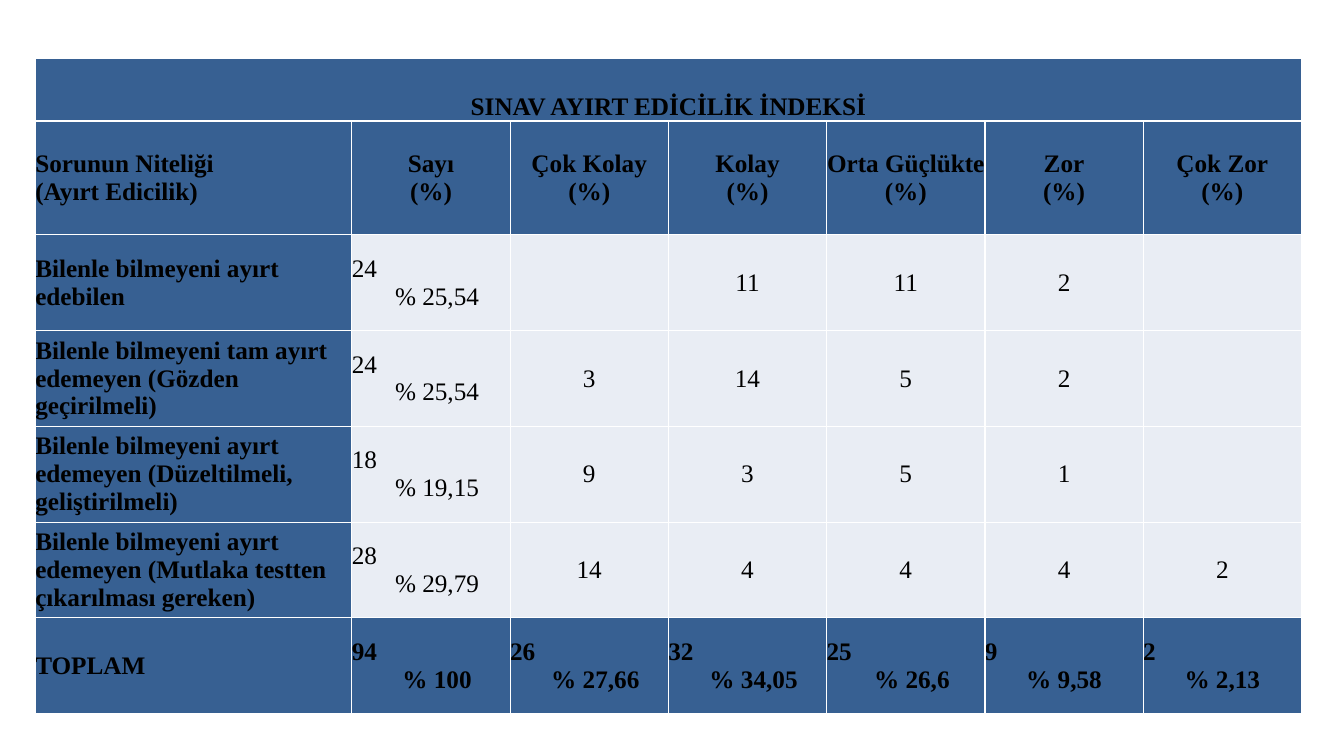
from lxml.etree import SubElement
from pptx import Presentation
from pptx.dml.color import RGBColor
from pptx.enum.text import MSO_ANCHOR as Anchor, PP_ALIGN as Align
from pptx.oxml.ns import qn
from pptx.util import Inches, Pt

FONT = "Times New Roman"
BLUE, PALE, WHITE, BLACK = "376092", "E9EDF4", "FFFFFF", "000000"

# Table grid: the label column is twice as wide as a value column
LEFT, TOP = 0.35, 0.58
VALUE_WIDTH = 1.57
COLUMN_WIDTHS = [2 * VALUE_WIDTH] + [VALUE_WIDTH] * 6
ROW_HEIGHTS = [0.62, 1.13] + [0.95] * 5
PERCENT_INDENT = Inches(0.12)

TITLE = "SINAV AYIRT EDİCİLİK İNDEKSİ"
LABEL_HEADING = "Sorunun Niteliği\v(Ayırt Edicilik)"
VALUE_HEADINGS = ["Sayı", "Çok Kolay", "Kolay", "Orta Güçlükte", "Zor", "Çok Zor"]

# A tuple is a count with its percentage
QUESTION_ROWS = [
    ["Bilenle bilmeyeni ayırt \vedebilen", ("24", "% 25,54"), "", "11", "11", "2", ""],
    ["Bilenle bilmeyeni tam ayırt edemeyen (Gözden geçirilmeli)",
     ("24", "% 25,54"), "3", "14", "5", "2", ""],
    ["Bilenle bilmeyeni ayırt edemeyen (Düzeltilmeli, geliştirilmeli)",
     ("18", "% 19,15"), "9", "3", "5", "1", ""],
    ["Bilenle bilmeyeni ayırt edemeyen (Mutlaka testten çıkarılması gereken)",
     ("28", "% 29,79"), "14", "4", "4", "4", "2"],
]
TOTAL_ROW = ["TOPLAM", ("94", "% 100"), ("26", "% 27,66"), ("32", "% 34,05"),
             ("25", "% 26,6"), ("9", "% 9,58"), ("2", "% 2,13")]


def color(hex_code):
    return RGBColor.from_string(hex_code)


def set_borders(cell, hex_code, width):
    """Draw the four edges; they must stand before the fill in the XML."""
    properties = cell._tc.get_or_add_tcPr()
    for index, side in enumerate(("lnL", "lnR", "lnT", "lnB")):
        line = SubElement(properties, qn(f"a:{side}"), w=str(Pt(width)))
        fill = SubElement(line, qn("a:solidFill"))
        SubElement(fill, qn("a:srgbClr"), val=hex_code)
        properties.insert(index, line)


def format_cell(cell, fill):
    cell.fill.solid()
    cell.fill.fore_color.rgb = color(fill)
    cell.margin_left = cell.margin_right = cell.margin_top = cell.margin_bottom = 0
    cell.vertical_anchor = Anchor.MIDDLE
    set_borders(cell, WHITE, 1)


def write_cell(cell, content, align, bold):
    is_pair = isinstance(content, tuple)
    cell.text_frame.text = "\n".join(content) if is_pair else content
    for paragraph in cell.text_frame.paragraphs:
        paragraph.alignment = align
        font = paragraph.font
        font.name, font.size, font.bold = FONT, Pt(18), bold
        font.color.rgb = color(BLACK)
    if is_pair:
        count, percent = cell.text_frame.paragraphs
        count.alignment = Align.LEFT
        if len(content[0]) > 1:
            percent._p.get_or_add_pPr().set("marL", str(PERCENT_INDENT))


def fill_row(table, row, contents, value_fill=BLUE):
    for column, content in enumerate(contents):
        cell = table.cell(row, column)
        is_label = column == 0
        fill = BLUE if is_label else value_fill
        format_cell(cell, fill)
        write_cell(cell, content, Align.LEFT if is_label else Align.CENTER, fill == BLUE)


def add_index_table(slide):
    shape = slide.shapes.add_table(
        len(ROW_HEIGHTS), len(COLUMN_WIDTHS), Inches(LEFT), Inches(TOP),
        Inches(sum(COLUMN_WIDTHS)), Inches(sum(ROW_HEIGHTS)))
    table = shape.table
    for column, width in zip(table.columns, COLUMN_WIDTHS):
        column.width = Inches(width)
    for row, height in zip(table.rows, ROW_HEIGHTS):
        row.height = Inches(height)
    return table


def main():
    presentation = Presentation()
    presentation.slide_width, presentation.slide_height = Inches(13.33), Inches(7.5)
    slide = presentation.slides.add_slide(presentation.slide_layouts[6])
    table = add_index_table(slide)

    # Title row across all columns
    fill_row(table, 0, [""] * len(COLUMN_WIDTHS))
    title_cell = table.cell(0, 0)
    title_cell.merge(table.cell(0, len(COLUMN_WIDTHS) - 1))
    write_cell(title_cell, TITLE, Align.CENTER, True)
    title_cell.vertical_anchor = Anchor.BOTTOM

    # Headings, question rows and totals
    fill_row(table, 1, [LABEL_HEADING] + [f"{name}\v(%)" for name in VALUE_HEADINGS])
    for row, contents in enumerate(QUESTION_ROWS, start=2):
        fill_row(table, row, contents, PALE)
    fill_row(table, len(ROW_HEIGHTS) - 1, TOTAL_ROW)

    presentation.save("out.pptx")


if __name__ == "__main__":
    main()
